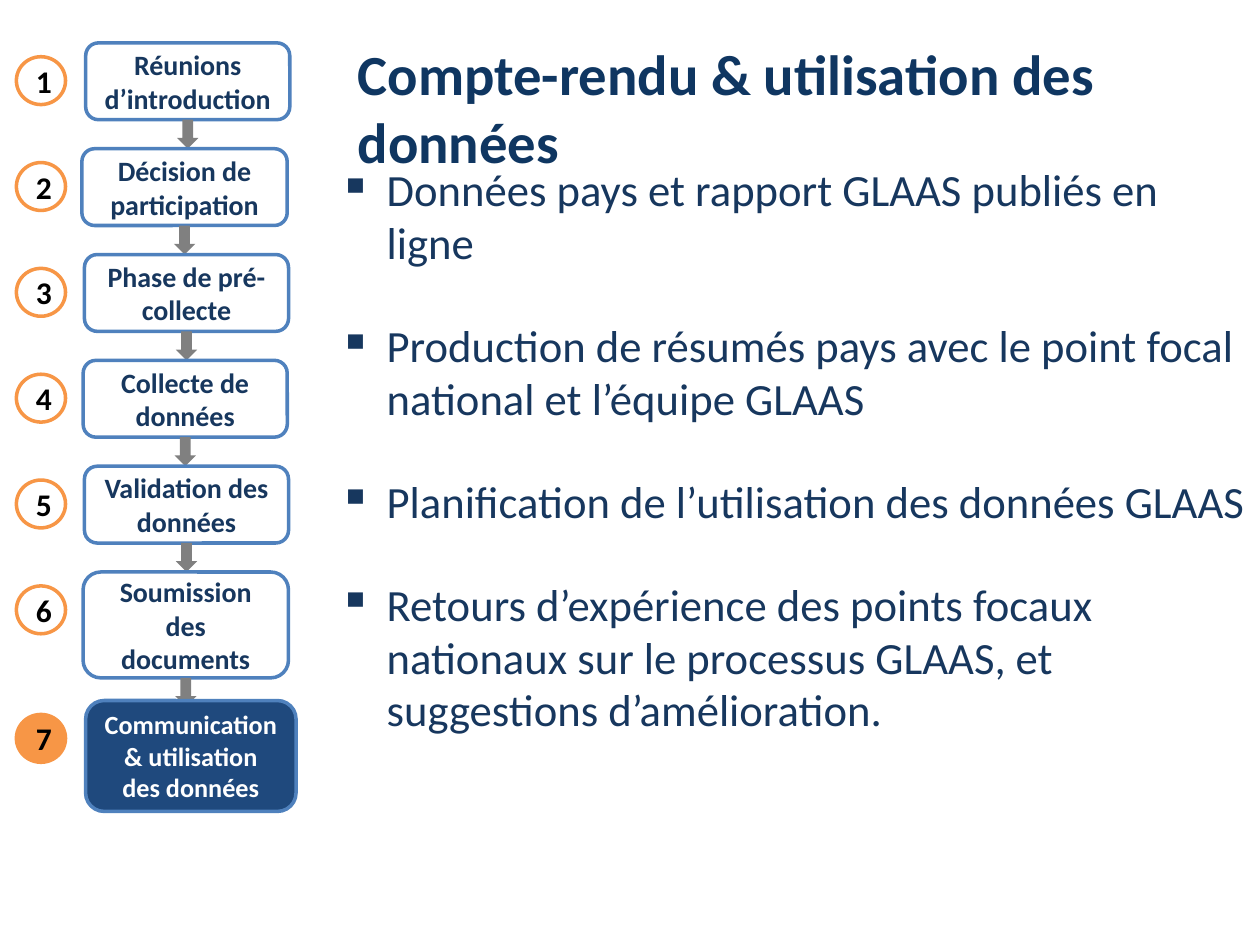
from lxml import etree
from pptx import Presentation
from pptx.dml.color import RGBColor
from pptx.enum.shapes import MSO_SHAPE
from pptx.enum.text import MSO_ANCHOR, PP_ALIGN
from pptx.oxml.ns import qn
from pptx.util import Inches, Pt

ROUNDED = MSO_SHAPE.ROUNDED_RECTANGLE
ELLIPSE = MSO_SHAPE.OVAL
ARROW = MSO_SHAPE.RIGHT_ARROW
MIDDLE = MSO_ANCHOR.MIDDLE
TOP = MSO_ANCHOR.TOP
CENTER = PP_ALIGN.CENTER

WHITE = RGBColor(0xFF, 0xFF, 0xFF)
BLACK = RGBColor(0x00, 0x00, 0x00)
GRAY = RGBColor(0x80, 0x80, 0x80)
NAVY = RGBColor(0x17, 0x37, 0x5E)
TITLE_NAVY = RGBColor(0x0F, 0x36, 0x61)
DEEP_BLUE = RGBColor(0x1F, 0x49, 0x7D)
BLUE = RGBColor(0x4F, 0x81, 0xBD)
ORANGE = RGBColor(0xF7, 0x96, 0x46)

FIRST_ROW, ROW_STEP, LAST_ROW = 0.34, 0.84, 5.56
BADGE_LEFT, BADGE_DROP, BADGE_WIDTH, BADGE_HEIGHT = 0.13, 0.11, 0.39, 0.38
ARROW_LENGTH, ARROW_THICKNESS, ARROW_GAP = 0.23, 0.17, 0.03
BULLET_INDENT = 0.38

STEPS = [
    ("Réunions d’introduction", 0.68, 1.62, 0.61),
    ("Décision de participation", 0.65, 1.63, 0.61),
    ("Phase de pré-collecte", 0.67, 1.62, 0.61),
    ("Collecte de données", 0.66, 1.62, 0.61),
    ("Validation des données", 0.67, 1.62, 0.61),
    ("Soumission des documents", 0.66, 1.63, 0.84),
    ("Communication & utilisation des données", 0.68, 1.67, 0.88),
]
TITLE = "Compte-rendu & utilisation des données"
POINTS = [
    "Données pays et rapport GLAAS publiés en ligne",
    "Production de résumés pays avec le point focal national et l’équipe GLAAS",
    "Planification de l’utilisation des données GLAAS",
    "Retours d’expérience des points focaux nationaux sur le processus GLAAS, "
    "et suggestions d’amélioration.",
]


def apply_format(target, values):
    for name, value in values.items():
        setattr(target, name, value)


def write(para, text, size, color, bold):
    span = para.add_run()
    span.text = text
    apply_format(span.font, {"name": "Calibri", "size": Pt(size), "bold": bold})
    span.font.color.rgb = color


def add_shape(page, kind, place, fill, line=None):
    shape = page.shapes.add_shape(kind, *map(Inches, place))
    shape.shadow.inherit = False
    shape.fill.solid()
    shape.fill.fore_color.rgb = fill
    if line is None:
        shape.line.fill.background()
    else:
        shape.line.color.rgb = line
        shape.line.width = Pt(2)
    return shape


def add_label(page, kind, place, fill, line, text, size, color):
    shape = add_shape(page, kind, place, fill, line)
    apply_format(shape.text_frame, {"word_wrap": True, "vertical_anchor": MIDDLE})
    para = shape.text_frame.paragraphs[0]
    para.alignment = CENTER
    write(para, text, size, color, True)


def add_down_arrow(page, center, top):
    place = (center - ARROW_LENGTH / 2, top, ARROW_LENGTH, ARROW_THICKNESS)
    add_shape(page, ARROW, place, GRAY).rotation = 90


def add_text_box(page, place, anchor):
    frame = page.shapes.add_textbox(*map(Inches, place)).text_frame
    apply_format(frame, {"word_wrap": True, "vertical_anchor": anchor})
    return frame


def add_bullet(para):
    properties = para._p.get_or_add_pPr()
    properties.set("marL", str(Inches(BULLET_INDENT)))
    properties.set("indent", str(-Inches(BULLET_INDENT)))
    etree.SubElement(properties, qn("a:buChar")).set("char", "▪")


def add_points(page, place):
    frame = add_text_box(page, place, TOP)
    for index, text in enumerate(POINTS):
        para = frame.paragraphs[0] if index == 0 else frame.add_paragraph()
        add_bullet(para)
        apply_format(para, {
            "line_spacing": 0.98,
            "space_before": Pt(5 if index else 0),
            "space_after": Pt(24),
        })
        write(para, text, 25.5, NAVY, False)


def add_steps(page):
    last = len(STEPS) - 1
    for index, (text, left, width, height) in enumerate(STEPS):
        current = index == last
        top = LAST_ROW if current else FIRST_ROW + ROW_STEP * index
        fill, color, size = (DEEP_BLUE, WHITE, 15) if current else (WHITE, NAVY, 16)
        add_label(page, ROUNDED, (left, top, width, height), fill, BLUE,
                  text, size, color)
        badge = (BADGE_LEFT, top + BADGE_DROP, BADGE_WIDTH, BADGE_HEIGHT)
        add_label(page, ELLIPSE, badge, ORANGE if current else WHITE, ORANGE,
                  str(index + 1), 18, BLACK)
        if not current:
            add_down_arrow(page, left + width / 2, top + height + ARROW_GAP)


def main():
    deck = Presentation()
    apply_format(deck, {"slide_width": Inches(10), "slide_height": Inches(7.5)})
    page = deck.slides.add_slide(deck.slide_layouts[6])
    title = add_text_box(page, (2.74, 0.3, 7.09, 1.09), MIDDLE)
    write(title.paragraphs[0], TITLE, 32.4, TITLE_NAVY, True)
    add_points(page, (2.59, 1.26, 7.41, 4.8))
    add_steps(page)
    deck.save("out.pptx")


if __name__ == "__main__":
    main()
